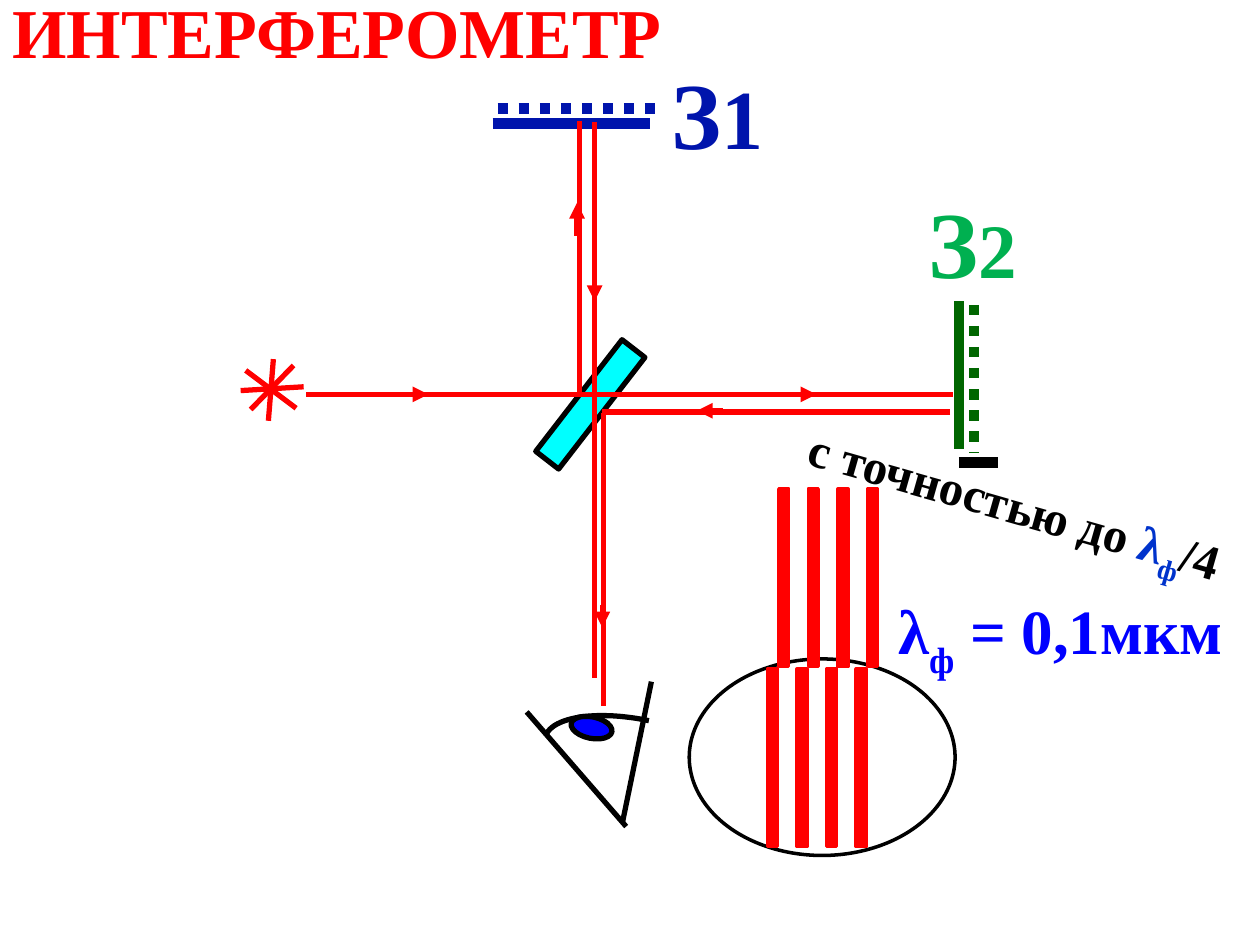
from lxml import etree
from pptx import Presentation
from pptx.dml.color import RGBColor
from pptx.enum import dml, shapes, text
from pptx.oxml import ns
from pptx.util import Inches, Pt

COLORS = {
    "red": "FF0000", "black": "000000", "white": "FFFFFF", "cyan": "00FFFF",
    "blue": "0000FF", "navy": "0014AC", "dark green": "006600",
    "green": "00B050", "royal": "0033CC",
}
FONT = "Times New Roman"


def rgb(name):
    return RGBColor.from_string(COLORS[name])


def add_line(slide, start, end, color="red", width=3, arrow=False, dotted=False):
    points = [Inches(value) for value in (*start, *end)]
    line = slide.shapes.add_connector(shapes.MSO_CONNECTOR.STRAIGHT, *points)
    line.line.color.rgb = rgb(color)
    line.line.width = Pt(width)
    if dotted:
        line.line.dash_style = dml.MSO_LINE.ROUND_DOT
    if arrow:
        tail = etree.SubElement(line.line._get_or_add_ln(), ns.qn("a:tailEnd"))
        tail.set("type", "triangle")
    etree.SubElement(line._element.spPr, ns.qn("a:effectLst"))


def add_shape(slide, kind, box, fill, line="black", width=3, rotation=0):
    shape = slide.shapes.add_shape(kind, *map(Inches, box))
    shape.shadow.inherit = False
    shape.fill.solid()
    shape.fill.fore_color.rgb = rgb(fill)
    shape.line.color.rgb = rgb(line)
    shape.line.width = Pt(width)
    shape.rotation = rotation


def write_runs(frame, runs, size):
    """Fill the frame with (text, color, options) runs in bold."""
    paragraph = frame.paragraphs[0]
    paragraph.alignment = text.PP_ALIGN.LEFT
    paragraph.font.name = FONT
    paragraph.font.bold = True
    paragraph.font.size = Pt(size)
    for content, color, options in runs:
        run = paragraph.add_run()
        run.text = content
        run.font.color.rgb = rgb(color)
        if "size" in options:
            run.font.size = Pt(options["size"])
        if "baseline" in options:
            run.font._element.set("baseline", str(options["baseline"] * 1000))


def add_label(slide, box, runs, size, wrap=False, rotation=0,
              anchor=text.MSO_ANCHOR.TOP):
    label = slide.shapes.add_textbox(*map(Inches, box))
    label.rotation = rotation
    label.text_frame.word_wrap = wrap
    label.text_frame.vertical_anchor = anchor
    write_runs(label.text_frame, runs, size)


def add_title(slide, box):
    title = slide.shapes.title
    title.left, title.top, title.width, title.height = map(Inches, box)
    title.text_frame.vertical_anchor = text.MSO_ANCHOR.MIDDLE
    title.text_frame.word_wrap = True
    write_runs(title.text_frame, [("ИНТЕРФЕРОМЕТР", "red", {})], 40)


def add_source(slide, left, top):
    rays = [((0.22, 0.49), (0.26, 0)), ((0, 0.25), (0.5, 0.22)),
            ((0.08, 0.4), (0.42, 0.05)), ((0.44, 0.39), (0.04, 0.09))]
    for start, end in rays:
        add_line(slide, (left + start[0], top + start[1]),
                 (left + end[0], top + end[1]))


def add_horizontal_beams(slide, left, top):
    add_line(slide, (left, top), (left + 5.13, top))
    for offset in (0.76, 3.84):
        add_line(slide, (left + offset, top), (left + offset + 0.21, top), arrow=True)
    add_line(slide, (left + 5.11, top + 0.14), (left + 2.35, top + 0.14))
    add_line(slide, (left + 3.31, top + 0.13), (left + 3.1, top + 0.13), arrow=True)


def add_upper_beams(slide, left, top):
    add_line(slide, (left, top), (left, top + 2.16))
    add_line(slide, (left - 0.02, top + 0.91), (left - 0.02, top + 0.65), arrow=True)
    add_line(slide, (left + 0.12, top + 0.01), (left + 0.12, top + 4.42))
    add_line(slide, (left + 0.12, top + 1.19), (left + 0.12, top + 1.43), arrow=True)


def add_lower_beam(slide, left, top):
    add_line(slide, (left, top), (left, top + 2.32))
    add_line(slide, (left - 0.01, top + 1.52), (left - 0.01, top + 1.7), arrow=True)


def add_mirror(slide, start, end, shift, color):
    """Solid mirror with its dotted displaced position."""
    add_line(slide, start, end, color, 6)
    moved = [(x + shift[0], y + shift[1]) for x, y in (start, end)]
    add_line(slide, *moved, color, 6, dotted=True)


def add_eye(slide, left, top):
    add_line(slide, (left + 0.76, top + 1.12), (left + 0.99, top), "black")
    add_line(slide, (left + 0.79, top + 1.15), (left, top + 0.24), "black")
    controls = [(0.16, 0.41), (0.24, 0.27), (0.59, 0.23), (0.97, 0.31)]
    steps = 24
    curve = []
    for step in range(steps + 1):
        t = step / steps
        weights = ((1 - t) ** 3, 3 * t * (1 - t) ** 2, 3 * t ** 2 * (1 - t), t ** 3)
        x, y = (sum(w * point[axis] for w, point in zip(weights, controls))
                for axis in (0, 1))
        curve.append((Inches(left + x), Inches(top + y)))
    builder = slide.shapes.build_freeform(*curve[0])
    builder.add_line_segments(curve[1:], close=False)
    eyelid = builder.convert_to_shape()
    eyelid.shadow.inherit = False
    eyelid.fill.background()
    eyelid.line.color.rgb = rgb("black")
    eyelid.line.width = Pt(3)
    add_shape(slide, shapes.MSO_SHAPE.OVAL, (left + 0.43, top + 0.2, 0.17, 0.33),
              "blue", rotation=101.7)


def add_fringes(slide, left, top):
    for index in range(4):
        add_shape(slide, shapes.MSO_SHAPE.RECTANGLE,
                  (left + index * 0.235, top, 0.08, 1.41), "red", "red", 2)


def add_fringe_view(slide, left, top):
    add_shape(slide, shapes.MSO_SHAPE.OVAL, (left, top, 2.11, 1.56),
              "white", width=2)
    add_fringes(slide, left + 0.62, top + 0.08)
    add_fringes(slide, left + 0.71, top - 1.35)


def add_accuracy_notes(slide):
    add_label(slide, (6.27, 3.73, 3.66, 0.57),
              [("с точностью до ", "black", {}), ("λ", "royal", {}),
               ("ф", "royal", {"baseline": -25}), ("/4", "black", {})],
              28, rotation=15.9)
    add_line(slide, (7.61, 3.67), (7.92, 3.67), "black", 6)
    add_label(slide, (7.03, 4.69, 2.97, 0.71),
              [("λ", "blue", {}), ("ф", "blue", {"baseline": -30}),
               (" = 0,1мкм", "blue", {})],
              36, wrap=True, anchor=text.MSO_ANCHOR.MIDDLE)


def main():
    presentation = Presentation()
    presentation.slide_width, presentation.slide_height = Inches(10), Inches(7.5)
    slide = presentation.slides.add_slide(presentation.slide_layouts[5])
    add_shape(slide, shapes.MSO_SHAPE.RECTANGLE, (4.57, 2.65, 0.23, 1.12),
              "cyan", rotation=37.7)
    add_title(slide, (0, -0.14, 5.86, 0.77))
    add_source(slide, 1.91, 2.85)
    add_horizontal_beams(slide, 2.43, 3.13)
    add_mirror(slide, (7.61, 2.39), (7.61, 3.56), (0.12, 0.03), "dark green")
    add_mirror(slide, (3.91, 0.98), (5.16, 0.98), (0.04, -0.12), "navy")
    add_upper_beams(slide, 4.6, 0.96)
    add_eye(slide, 4.18, 5.41)
    add_label(slide, (5.23, 0.39, 0.94, 1.01),
              [("З", "navy", {}), ("1", "navy", {"size": 48})], 54)
    add_label(slide, (7.27, 1.41, 0.94, 1.01),
              [("З", "green", {}), ("2", "green", {"size": 44})], 54)
    add_lower_beam(slide, 4.79, 3.28)
    add_fringe_view(slide, 5.47, 5.23)
    add_accuracy_notes(slide)
    presentation.save("out.pptx")


if __name__ == "__main__":
    main()
